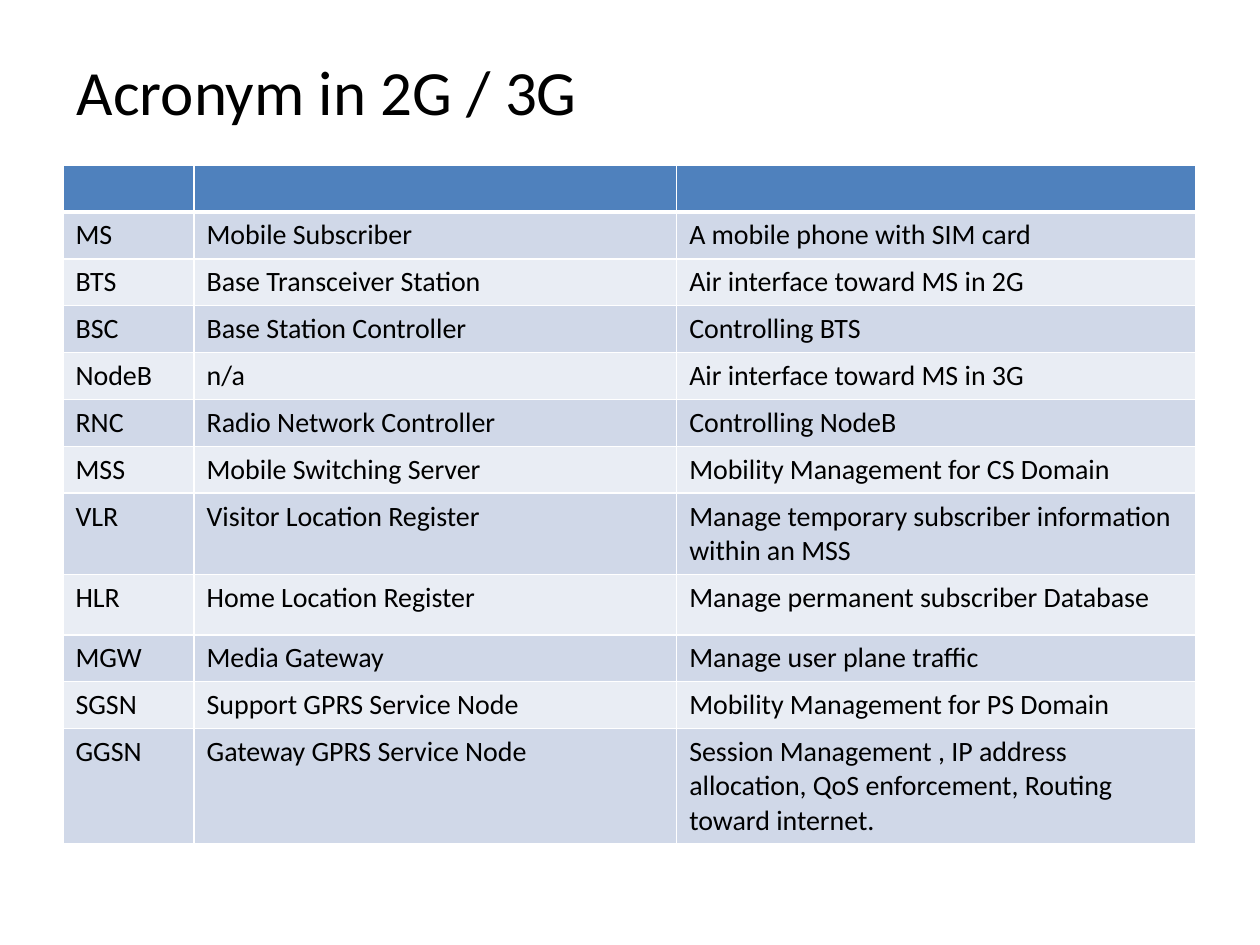
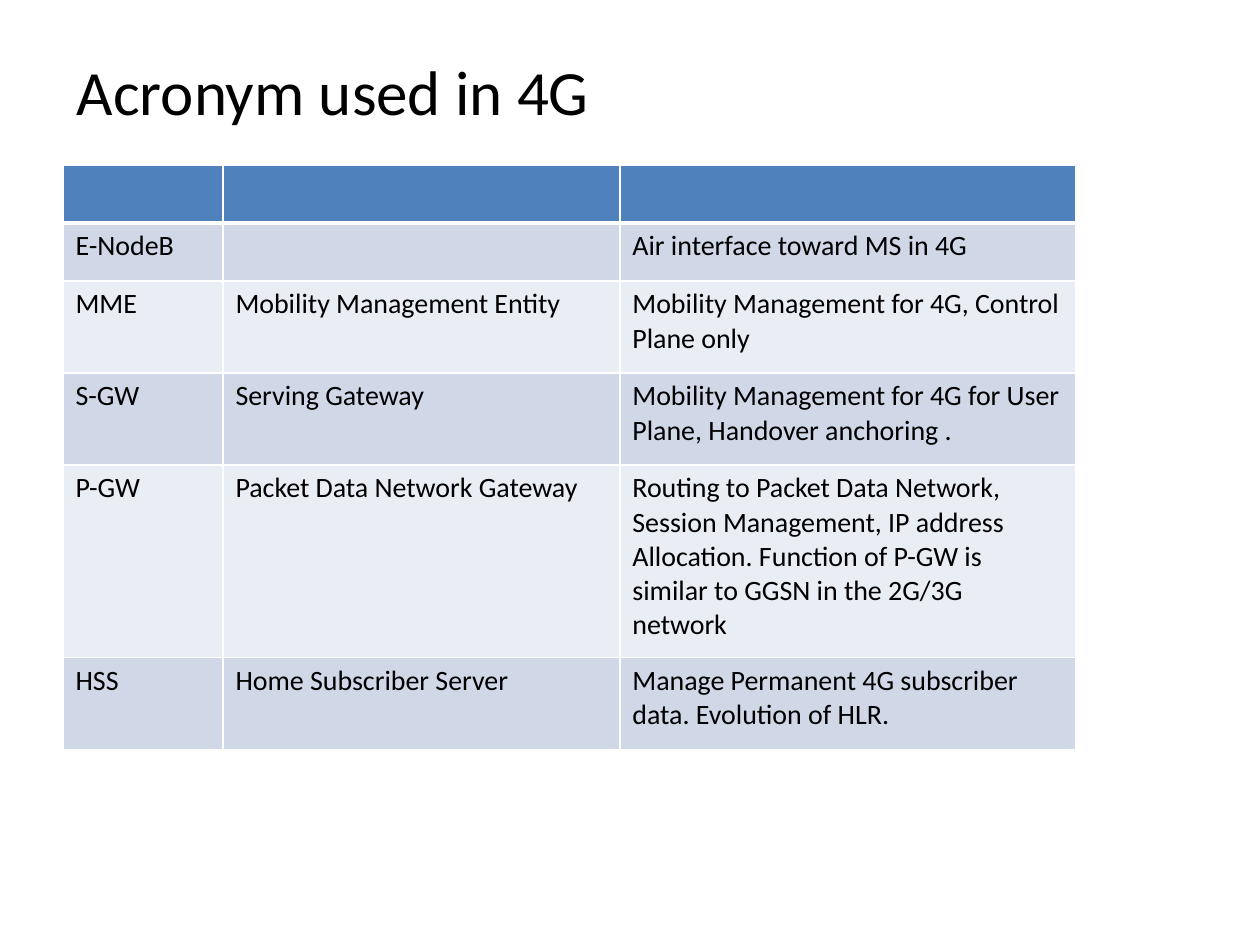
"""Build two slides of mobile network acronym tables."""
from dataclasses import dataclass

from lxml.etree import SubElement
from pptx import Presentation
from pptx.dml.color import RGBColor as Color
from pptx.enum.text import MSO_ANCHOR as Anchor, PP_ALIGN as Align
from pptx.oxml.ns import qn
from pptx.util import Pt


@dataclass(frozen=True)
class Theme:
    font: str = "Calibri"
    ink: str = "000000"
    paper: str = "FFFFFF"
    head: str = "4F81BD"
    bands: tuple[str, str] = ("D0D8E8", "E9EDF4")
    title: int = 36
    body: int = 16
    rule: int = 1
    heavy: int = 3


@dataclass(frozen=True)
class Row:
    high: float
    cells: tuple[str, str, str]


@dataclass(frozen=True)
class Page:
    title: str
    high: float
    cols: tuple[float, float, float]
    rows: tuple[Row, ...]


LOOK = Theme()
LEFT, TOP = 36, 94.3
SLIM, MID, TALL = 21.6, 34.6, 46.8
LOW, PAIR, DEEP = 33.1, 52.6, 110.2
BLANK = ("", "", "")

PAGES = (
    Page("Acronym in 2G / 3G", 382.3, (74.9, 275.8, 296.6), (
        Row(SLIM, BLANK),
        Row(SLIM, ("MS", "Mobile Subscriber", "A mobile phone with SIM card")),
        Row(SLIM, ("BTS", "Base Transceiver Station", "Air interface toward MS in 2G")),
        Row(SLIM, ("BSC", "Base Station Controller", "Controlling BTS")),
        Row(SLIM, ("NodeB", "n/a", "Air interface toward MS in 3G")),
        Row(SLIM, ("RNC", "Radio Network Controller", "Controlling NodeB")),
        Row(SLIM, ("MSS", "Mobile Switching Server", "Mobility Management for CS Domain")),
        Row(MID, ("VLR", "Visitor Location Register",
                  "Manage temporary subscriber information within an MSS")),
        Row(MID, ("HLR", "Home Location Register", "Manage permanent subscriber Database")),
        Row(SLIM, ("MGW", "Media Gateway", "Manage user plane traffic")),
        Row(SLIM, ("SGSN", "Support GPRS Service Node", "Mobility Management for PS Domain")),
        Row(TALL, ("GGSN", "Gateway GPRS Service Node",
                   "Session Management , IP address allocation, QoS enforcement, "
                   "Routing toward internet.")),
    )),
    Page("Acronym used in 4G", 334.8, (91.4, 226.8, 260.6), (
        Row(LOW, BLANK),
        Row(LOW, ("E-NodeB", "", "Air interface toward MS in 4G")),
        Row(PAIR, ("MME", "Mobility Management Entity",
                   "Mobility Management for 4G, Control Plane only")),
        Row(PAIR, ("S-GW", "Serving Gateway",
                   "Mobility Management for 4G for User Plane, Handover anchoring .")),
        Row(DEEP, ("P-GW", "Packet Data Network Gateway",
                   "Routing to Packet Data Network, Session Management, IP address "
                   "Allocation. Function of P-GW is similar to GGSN in the 2G/3G network")),
        Row(PAIR, ("HSS", "Home Subscriber Server",
                   "Manage Permanent 4G subscriber data. Evolution of HLR.")),
    )),
)


def style(para, size: int) -> None:
    for run in para.runs:
        run.font.name = LOOK.font
        run.font.size = Pt(size)
        run.font.color.rgb = Color.from_string(LOOK.ink)
    if not para.runs:
        SubElement(para._p, qn("a:endParaRPr"), sz=str(size * 100))


def edge(cell, side: str, width: int) -> None:
    line = SubElement(cell._tc.get_or_add_tcPr(), qn(f"a:ln{side}"), w=str(Pt(width)))
    fill = SubElement(line, qn("a:solidFill"))
    SubElement(fill, qn("a:srgbClr"), val=LOOK.paper)


def paint(cell, text: str, row: int) -> None:
    head = row == 0
    cell.text_frame.text = text
    style(cell.text_frame.paragraphs[0], LOOK.body)
    for side in "LRTB" if head else "LRB":
        edge(cell, side, LOOK.heavy if head and side == "B" else LOOK.rule)
    cell.fill.solid()
    tone = LOOK.head if head else LOOK.bands[(row - 1) % 2]
    cell.fill.fore_color.rgb = Color.from_string(tone)


def name(slide, text: str) -> None:
    title = slide.shapes.title
    title.left, title.top = Pt(36.7), Pt(20.9)
    title.width, title.height = Pt(648), Pt(61.2)
    frame = title.text_frame
    frame.text = text
    frame.vertical_anchor = Anchor.MIDDLE
    frame.paragraphs[0].alignment = Align.LEFT
    style(frame.paragraphs[0], LOOK.title)


def grid(slide, page: Page) -> None:
    frame = slide.shapes.add_table(
        len(page.rows), len(page.cols), Pt(LEFT), Pt(TOP), Pt(sum(page.cols)), Pt(page.high))
    table = frame.table
    for col, wide in zip(table.columns, page.cols):
        col.width = Pt(wide)
    for i, row in enumerate(page.rows):
        table.rows[i].height = Pt(row.high)
        for cell, text in zip(table.rows[i].cells, row.cells):
            paint(cell, text, i)
    frame.height = Pt(page.high)


def main() -> None:
    deck = Presentation()
    deck.slide_width, deck.slide_height = Pt(720), Pt(540)
    for page in PAGES:
        slide = deck.slides.add_slide(deck.slide_layouts[5])
        name(slide, page.title)
        grid(slide, page)
    deck.save("out.pptx")


if __name__ == "__main__":
    main()
